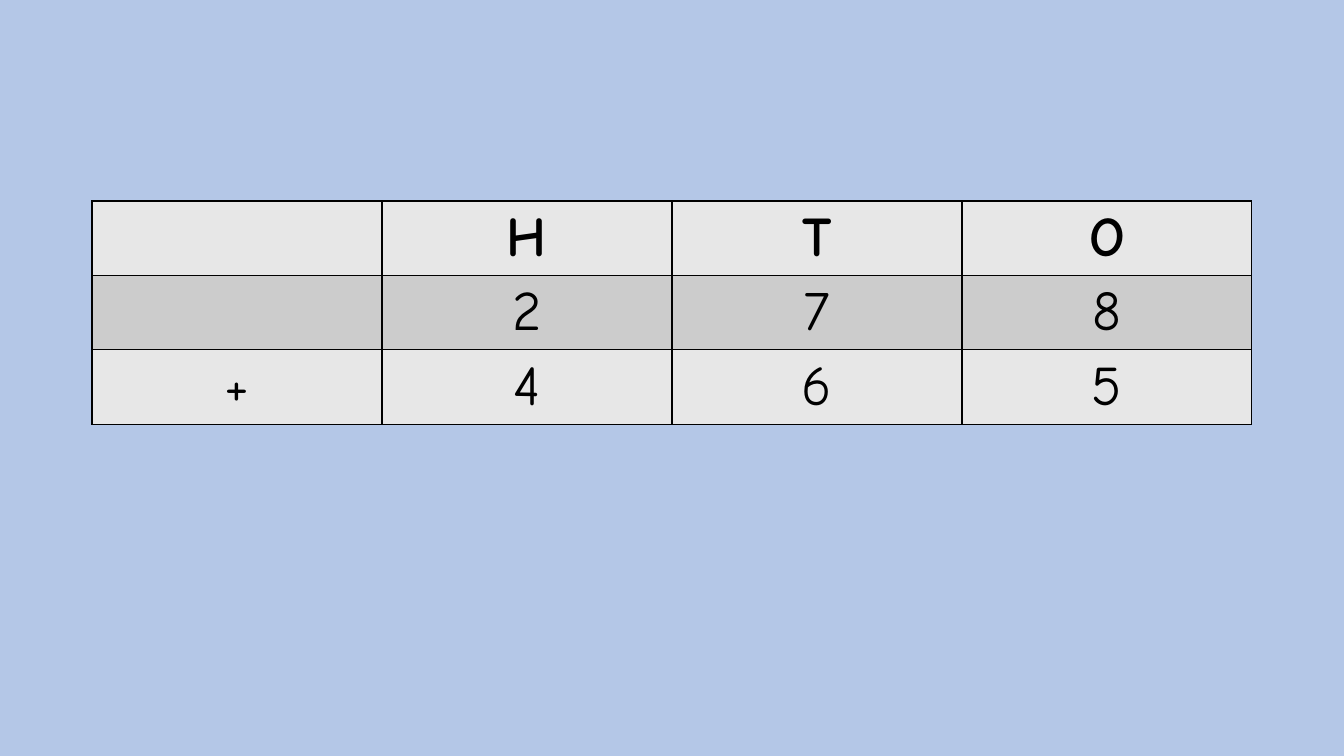
from lxml.etree import SubElement as Sub
from pptx import Presentation
from pptx.dml.color import RGBColor as RGB
from pptx.enum.text import PP_ALIGN as Align
from pptx.oxml.ns import qn
from pptx.util import Pt

SCALE = 914400 / 100.8  # EMU per px
HUES = {"back": "B4C7E7", "light": "E7E7E7", "dark": "CCCCCC", "ink": "000000"}
FONT = "Comic Neue"
ROWS = [["", "H", "T", "O"], ["", "2", "7", "8"], ["+", "4", "6", "5"]]


def px(n):
    return round(n * SCALE)


def hue(name):
    return RGB.from_string(HUES[name])


def frame(cell):
    """Draw a thin line on each side, ahead of the cell's fill."""
    props = cell._tc.get_or_add_tcPr()
    for side in ("lnL", "lnR", "lnT", "lnB"):
        line = Sub(props, qn(f"a:{side}"), w=str(Pt(1)))
        fill = Sub(line, qn("a:solidFill"))
        Sub(fill, qn("a:srgbClr"), val=HUES["ink"])


def style(cell, text, head, tone):
    frame(cell)
    cell.fill.solid()
    cell.fill.fore_color.rgb = hue(tone)
    cell.text = text
    para = cell.text_frame.paragraphs[0]
    para.alignment = Align.CENTER
    font = para.font
    font.name, font.size, font.bold = FONT, Pt(40), head
    font.color.rgb = hue("ink")


def add_sum(slide, x, y, w, h):
    """Place value table: headings, then the two numbers to add."""
    count, width = len(ROWS), len(ROWS[0])
    table = slide.shapes.add_table(count, width, px(x), px(y), px(w), px(h)).table
    for r, row in enumerate(ROWS):
        for c, text in enumerate(row):
            style(table.cell(r, c), text, r == 0, "dark" if r % 2 else "light")


def main():
    deck = Presentation()
    deck.slide_width, deck.slide_height = px(1344), px(756)
    slide = deck.slides.add_slide(deck.slide_layouts[6])

    # Background
    slide.background.fill.solid()
    slide.background.fill.fore_color.rgb = hue("back")

    # Column addition
    add_sum(slide, 92, 201, 1160, 222)
    deck.save("out.pptx")


if __name__ == "__main__":
    main()
